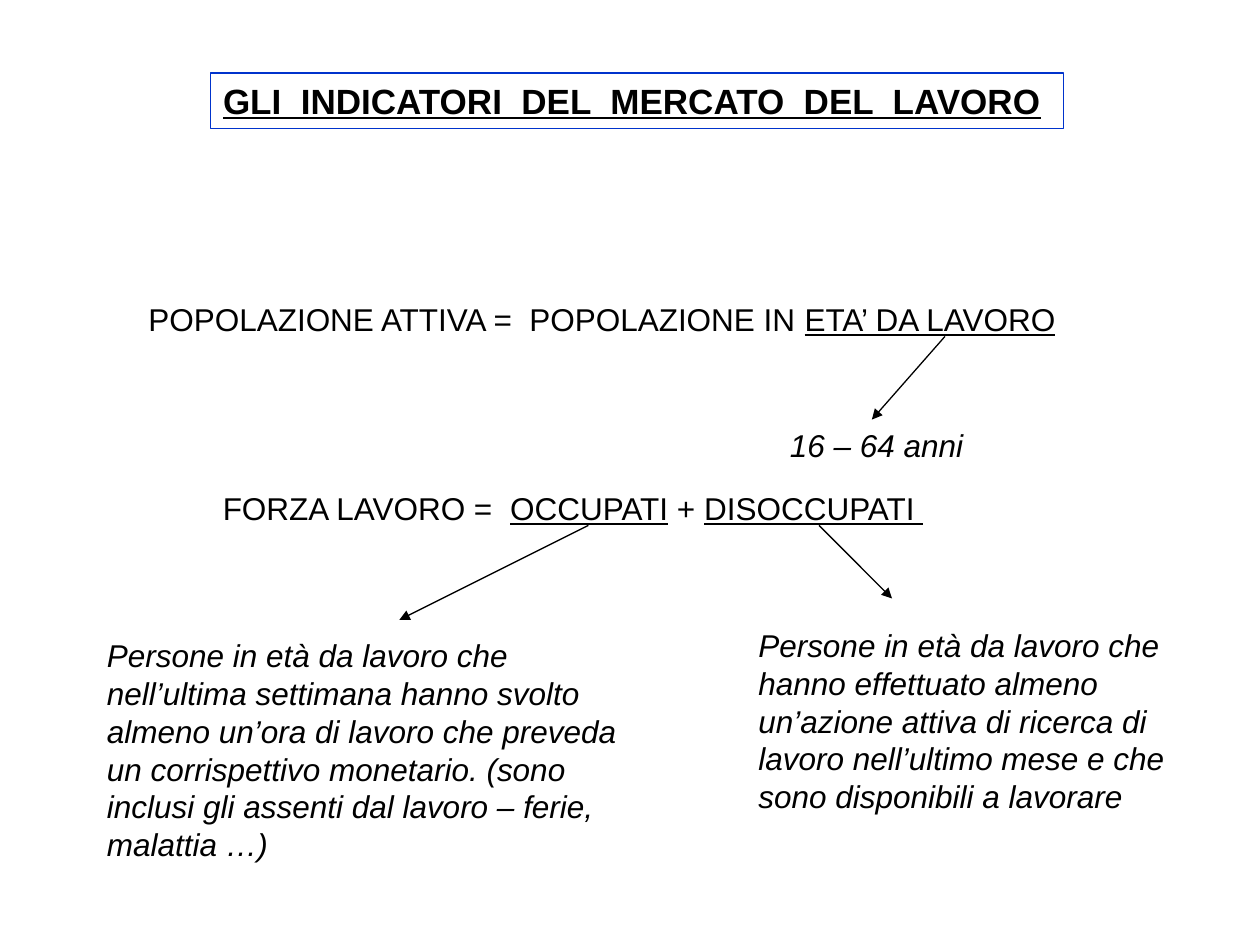
from dataclasses import dataclass
from typing import Any

from lxml.etree import SubElement
from pptx import Presentation
from pptx.dml.color import RGBColor
from pptx.enum.shapes import MSO_CONNECTOR as Connector
from pptx.enum.text import MSO_ANCHOR as Anchor, MSO_AUTO_SIZE as AutoSize, PP_ALIGN as Align
from pptx.oxml.ns import qn
from pptx.util import Inches, Pt


@dataclass(frozen=True)
class Theme:
    font: str = "Arial"
    text: RGBColor = RGBColor(0, 0, 0)
    frame: RGBColor = RGBColor(0x00, 0x33, 0xCC)
    title_size: Pt = Pt(20)
    body_size: Pt = Pt(18)
    line_width: Pt = Pt(0.75)


@dataclass(frozen=True)
class Run:
    text: str
    underline: bool = False
    italic: bool = False
    bold: bool = False
    size: Pt = Theme.body_size


@dataclass(frozen=True)
class TextBlock:
    left: float
    top: float
    width: float
    height: float
    runs: tuple[Run, ...]


@dataclass(frozen=True)
class Arrow:
    start: tuple[float, float]
    end: tuple[float, float]


THEME = Theme()

TITLE = TextBlock(1.67, 0.58, 6.77, 0.44, (
    Run("GLI  INDICATORI  DEL  MERCATO  DEL  LAVORO",
        underline=True, bold=True, size=THEME.title_size),
))

BLOCKS = (
    TextBlock(1.67, 3.83, 5.87, 0.4, (
        Run("FORZA LAVORO =  "),
        Run("OCCUPATI", underline=True),
        Run(" + "),
        Run("DISOCCUPATI ", underline=True),
    )),
    TextBlock(1.08, 2.33, 7.54, 0.4, (
        Run("POPOLAZIONE ATTIVA =  POPOLAZIONE IN "),
        Run("ETA’ DA LAVORO", underline=True),
    )),
    TextBlock(6.17, 3.33, 1.65, 0.4, (Run("16 – 64 anni", italic=True),)),
    TextBlock(5.92, 4.92, 3.5, 1.6, (
        Run("Persone in età da lavoro che hanno effettuato almeno un’azione attiva "
            "di ricerca di lavoro nell’ultimo mese e che sono disponibili a lavorare",
            italic=True),
    )),
    TextBlock(0.75, 5, 4.5, 1.9, (
        Run("Persone in età da lavoro che nell’ultima settimana hanno svolto almeno "
            "un’ora di lavoro che preveda un corrispettivo monetario. (sono inclusi "
            "gli assenti dal lavoro – ferie, malattia …)", italic=True),
    )),
)

ARROWS = (
    Arrow((7.5, 2.67), (6.92, 3.33)),
    Arrow((6.5, 4.17), (7.08, 4.75)),
    Arrow((4.67, 4.17), (3.17, 4.92)),
)


def apply_format(target: Any, values: dict[str, Any]) -> None:
    for name, value in values.items():
        setattr(target, name, value)


def fill_text(shape: Any, block: TextBlock) -> None:
    apply_format(shape, {
        side: Inches(getattr(block, side)) for side in ("left", "top", "width", "height")
    })
    apply_format(shape.text_frame, {
        "word_wrap": True,
        "auto_size": AutoSize.NONE,
        "vertical_anchor": Anchor.TOP,
    })
    paragraph = shape.text_frame.paragraphs[0]
    paragraph.alignment = Align.LEFT
    for item in block.runs:
        run = paragraph.add_run()
        run.text = item.text
        apply_format(run.font, {
            "name": THEME.font,
            "size": item.size,
            "bold": item.bold,
            "italic": item.italic,
            "underline": item.underline,
        })
        run.font.color.rgb = THEME.text


def draw_line(line: Any, color: RGBColor) -> None:
    line.width = THEME.line_width
    line.fill.solid()
    line.color.rgb = color


def add_arrow(slide: Any, arrow: Arrow) -> None:
    points = [Inches(value) for value in (*arrow.start, *arrow.end)]
    connector = slide.shapes.add_connector(Connector.STRAIGHT, *points)
    draw_line(connector.line, THEME.text)
    SubElement(connector.line._get_or_add_ln(), qn("a:tailEnd"), type="triangle")
    SubElement(connector._element.spPr, qn("a:effectLst"))


def main() -> None:
    presentation = Presentation()
    apply_format(presentation, {"slide_width": Inches(10), "slide_height": Inches(7.5)})
    slide = presentation.slides.add_slide(presentation.slide_layouts.get_by_name("Title Only"))
    title = slide.shapes.title
    fill_text(title, TITLE)
    draw_line(title.line, THEME.frame)
    for block in BLOCKS:
        fill_text(slide.shapes.add_textbox(0, 0, 0, 0), block)
    for arrow in ARROWS:
        add_arrow(slide, arrow)
    presentation.save("out.pptx")


if __name__ == "__main__":
    main()
